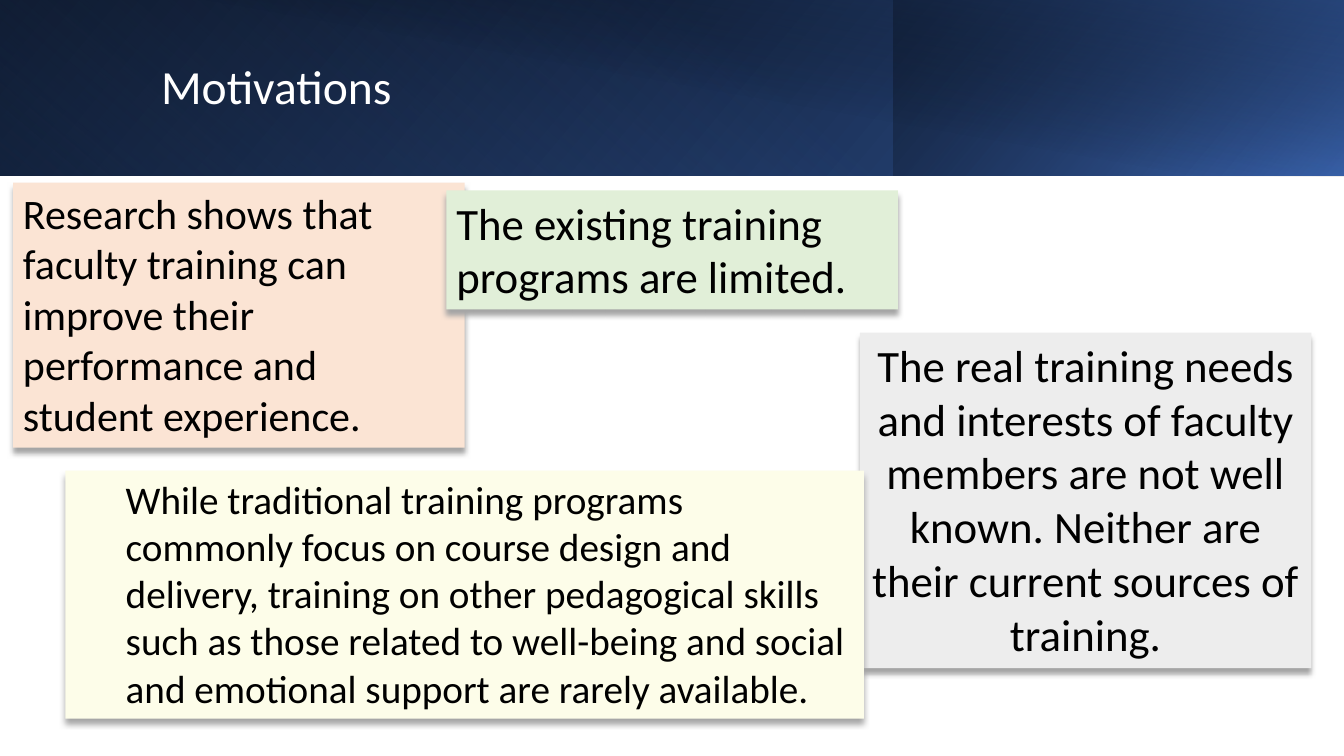
from lxml.etree import SubElement
from pptx import Presentation
from pptx.dml.color import RGBColor
from pptx.enum.shapes import MSO_SHAPE
from pptx.enum.text import MSO_ANCHOR, MSO_AUTO_SIZE, PP_ALIGN
from pptx.oxml import parse_xml
from pptx.oxml.ns import nsdecls, qn
from pptx.util import Cm, Pt

SLIDE_W, SLIDE_H = 33.87, 19.05
BANNER_H = 4.42
CARD_W = 11.38

# Each layer: left, width, height, gradient angle, rotation, mirrored,
# stops as (position %, colour, opacity %)
BANNER_LAYERS = [
    (0, SLIDE_W, BANNER_H, 140, 0, True,
     [(0, "000000", 100), (100, "2F5496", 100)]),
    (0, 22.55, BANNER_H, 230, 180, True,
     [(0, "4472C4", 0), (20, "4472C4", 0), (100, "1F3864", 55)]),
    (22.53, 11.34, BANNER_H, 220, 0, False,
     [(0, "4472C4", 66), (100, "000000", 30)]),
    (1.27, 32.6, 4.45, 280, 0, False,
     [(0, "000000", 0), (50, "000000", 0), (99, "1F3864", 52),
      (100, "1F3864", 52)]),
]

# Each card: box, fill, text, text size, alignment, left indent
CARDS = [
    ((0.33, 4.6, CARD_W, 6.68), "FBE4D4",
     "Research shows that faculty training can improve their performance "
     "and student experience.", 30, PP_ALIGN.LEFT, 0),
    ((11.25, 4.8, CARD_W, 3), "E1EFD8",
     "The existing training programs are limited.", 32, PP_ALIGN.LEFT, 0),
    ((21.67, 8.38, CARD_W, 8.46), "EDEDED",
     "The real training needs and interests of faculty members are not well "
     "known. Neither are their current sources of training.",
     32, PP_ALIGN.CENTER, 0),
    ((1.65, 11.86, 20.12, 6.25), "FDFDE9",
     "While traditional training programs commonly focus on course design "
     "and delivery, training on other pedagogical skills such as those "
     "related to well-being and social and emotional support are rarely "
     "available.", 28, PP_ALIGN.LEFT, 1.27),
]


def color(value):
    return RGBColor.from_string(value)


def set_all(obj, values):
    for name, value in values.items():
        setattr(obj, name, value)


def add_rect(s, box):
    sp = s.shapes.add_shape(MSO_SHAPE.RECTANGLE, *map(Cm, box))
    sp.shadow.inherit = False
    sp.line.fill.background()
    return sp


def write_text(tf, text, size, hex_color, frame, para):
    set_all(tf, {"word_wrap": True, **frame})
    p = tf.paragraphs[0]
    set_all(p, para)
    r = p.add_run()
    r.text = text
    set_all(r.font, {"name": "Calibri", "size": Pt(size)})
    r.font.color.rgb = color(hex_color)
    return p


def set_gradient(sp, angle, stops):
    gs = "".join(
        f'<a:gs pos="{pos * 1000}"><a:srgbClr val="{rgb}">'
        f'<a:alpha val="{alpha * 1000}"/></a:srgbClr></a:gs>'
        for pos, rgb, alpha in stops)
    grad = parse_xml(
        f'<a:gradFill {nsdecls("a")} rotWithShape="1"><a:gsLst>{gs}</a:gsLst>'
        f'<a:lin ang="{angle * 60000}" scaled="0"/></a:gradFill>')
    sp.fill.background()
    spPr = sp.element.spPr
    spPr.replace(spPr.find(qn("a:noFill")), grad)


def add_shadow(sp):
    effects = sp.element.spPr.find(qn("a:effectLst"))
    shadow = SubElement(effects, qn("a:outerShdw"), blurRad=str(Pt(4)),
                        dist=str(Pt(4)), dir="5400000", algn="ctr",
                        rotWithShape="0")
    SubElement(shadow, qn("a:srgbClr"), val="A5A5A5")


def add_banner(s, left, top):
    # Stacked gradient layers
    for dx, width, height, angle, rotation, mirrored, stops in BANNER_LAYERS:
        sp = add_rect(s, (left + dx, top, width, height))
        set_gradient(sp, angle, stops)
        sp.rotation = rotation
        if mirrored:
            sp.element.spPr.find(qn("a:xfrm")).set("flipH", "1")
    # Title
    title = s.shapes.add_textbox(Cm(left + 3.81), Cm(top + 0.81),
                                 Cm(26.31), Cm(2.87))
    write_text(title.text_frame, "Motivations", 34, "FFFFFF",
               {"vertical_anchor": MSO_ANCHOR.MIDDLE}, {"line_spacing": 0.9})


def add_card(s, box, fill, text, size, align, indent):
    sp = add_rect(s, box)
    sp.fill.solid()
    sp.fill.fore_color.rgb = color(fill)
    add_shadow(sp)
    p = write_text(sp.text_frame, text, size, "000000",
                   {"vertical_anchor": MSO_ANCHOR.TOP,
                    "auto_size": MSO_AUTO_SIZE.SHAPE_TO_FIT_TEXT},
                   {"alignment": align})
    if indent:
        p.level = 1
        pPr = p._p.get_or_add_pPr()
        pPr.set("marL", str(Cm(indent)))
        pPr.set("indent", "0")


def main():
    prs = Presentation()
    set_all(prs, {"slide_width": Cm(SLIDE_W), "slide_height": Cm(SLIDE_H)})
    s = prs.slides.add_slide(prs.slide_layouts[6])
    add_banner(s, 0, 0)
    for card in CARDS:
        add_card(s, *card)
    prs.save("out.pptx")


if __name__ == "__main__":
    main()
